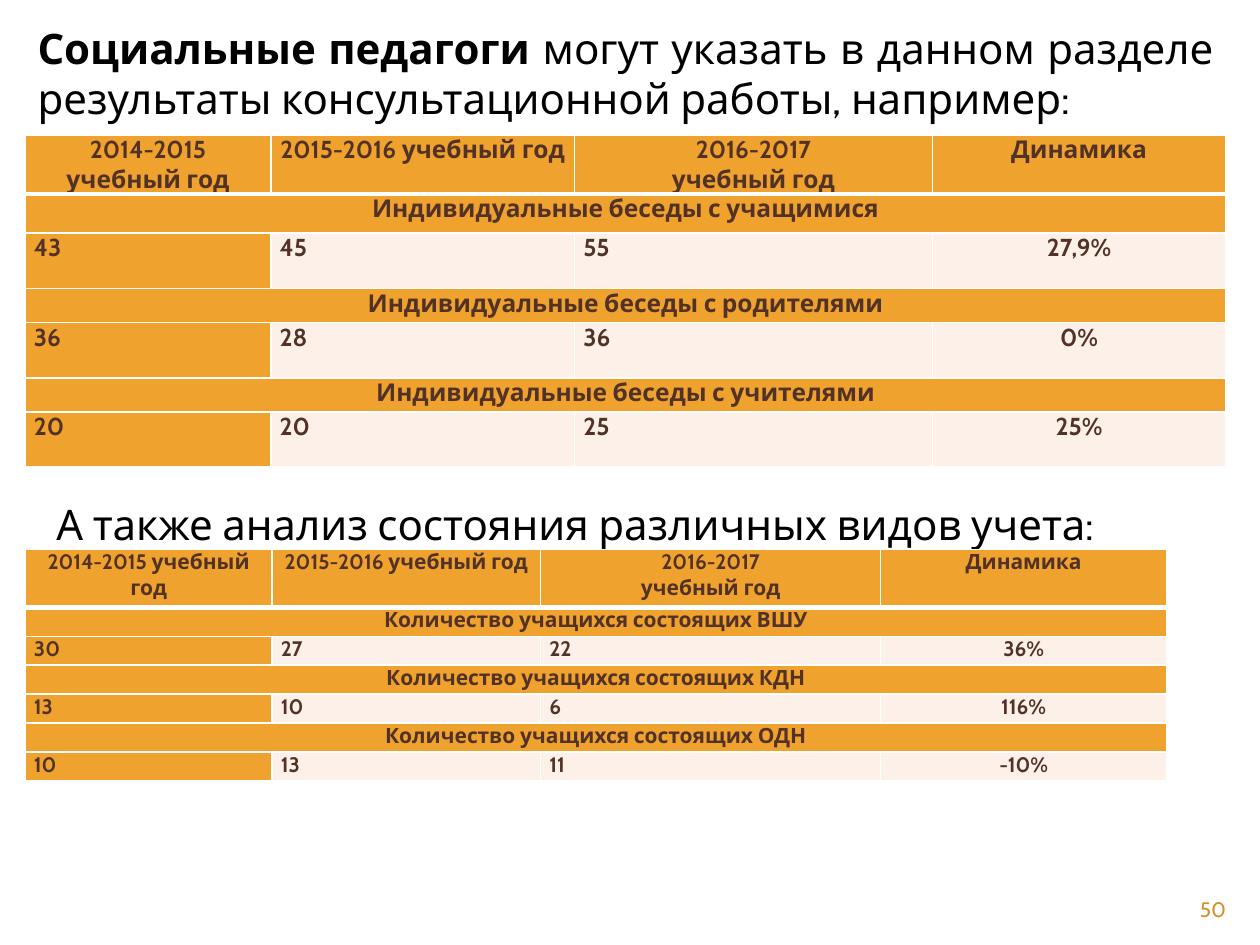
from lxml.etree import SubElement
from pptx import Presentation
from pptx.dml.color import RGBColor
from pptx.enum.text import MSO_ANCHOR, PP_ALIGN
from pptx.oxml.ns import qn
from pptx.util import Pt

PX = 9144
FONT = "Cabin"
WHITE = RGBColor(0xFF, 0xFF, 0xFF)
BLACK = RGBColor(0x00, 0x00, 0x00)
GOLD = RGBColor(0xF0, 0xA2, 0x2E)
CREAM = RGBColor(0xFC, 0xF0, 0xE8)
BROWN = RGBColor(0x52, 0x32, 0x27)
OCHRE = RGBColor(0xD4, 0x8F, 0x29)

YEARS = ["2014-2015 учебный год", "2015-2016 учебный год",
         "2016-2017\nучебный год", "Динамика"]
TALKS = [
    ("Индивидуальные беседы с учащимися", ["43", "45", "55", "27,9%"]),
    ("Индивидуальные беседы с родителями", ["36", "28", "36", "0%"]),
    ("Индивидуальные беседы с учителями", ["20", "20", "25", "25%"]),
]
COUNTS = [
    ("Количество учащихся состоящих ВШУ", ["30", "27", "22", "36%"]),
    ("Количество учащихся состоящих КДН", ["13", "10", "6", "116%"]),
    ("Количество учащихся состоящих ОДН", ["10", "13", "11", "-10%"]),
]


def scale(box):
    return [n * PX for n in box]


def style(para, size, color, align, bold=None):
    para.alignment = align
    font = para.font
    font.name, font.size, font.bold = FONT, Pt(size), bold
    font.color.rgb = color


def add_text(slide, box, parts, size, color, align, anchor=MSO_ANCHOR.TOP):
    frame = slide.shapes.add_textbox(*scale(box)).text_frame
    frame.word_wrap = True
    frame.vertical_anchor = anchor
    para = frame.paragraphs[0]
    style(para, size, color, align)
    for words, bold in parts:
        run = para.add_run()
        run.text = words
        if bold:
            run.font.bold = True


def add_edges(cell, top, base):
    props = cell._tc.get_or_add_tcPr()
    edges = (("lnL", 1), ("lnR", 1), ("lnT", top), ("lnB", base))
    for tag, width in edges:
        line = SubElement(props, qn(f"a:{tag}"), w=str(Pt(width)))
        fill = SubElement(line, qn("a:solidFill"))
        SubElement(fill, qn("a:srgbClr"), val=str(WHITE))


def fill_cell(cell, words, size, color, align, top=1, base=1):
    add_edges(cell, top, base)
    cell.fill.solid()
    cell.fill.fore_color.rgb = color
    cell.margin_left = cell.margin_right = 7 * PX
    cell.margin_top = cell.margin_bottom = 0
    cell.text = words
    for para in cell.text_frame.paragraphs:
        style(para, size, BROWN, align, True)


def add_grid(slide, box, cols, rows, groups, size):
    shape = slide.shapes.add_table(len(rows), len(cols), *scale(box))
    table = shape.table
    table.horz_banding = False
    for col, width in zip(table.columns, cols):
        col.width = width * PX
    for row, height in zip(table.rows, rows):
        row.height = height * PX
    for c, year in enumerate(YEARS):
        fill_cell(table.cell(0, c), year, size, GOLD, PP_ALIGN.CENTER, base=3)
    last = len(cols) - 1
    for g, (title, values) in enumerate(groups):
        r = 1 + 2 * g
        table.cell(r, 0).merge(table.cell(r, last))
        for c, value in enumerate(values):
            fill_cell(table.cell(r, c), "" if c else title, size, GOLD,
                      PP_ALIGN.CENTER, top=1 if g else 3)
            fill_cell(table.cell(r + 1, c), value, size, CREAM if c else GOLD,
                      PP_ALIGN.CENTER if c == last else PP_ALIGN.LEFT)


def main():
    deck = Presentation()
    deck.slide_width, deck.slide_height = scale((1000, 750))
    slide = deck.slides.add_slide(deck.slide_layouts[6])
    add_text(slide, (900, 708, 83, 27), [("50", False)], 12, OCHRE,
             PP_ALIGN.RIGHT, MSO_ANCHOR.MIDDLE)
    add_text(slide, (20, 13, 953, 131),
             [("Социальные педагоги ", True),
              ("могут указать в данном разделе результаты "
               "консультационной работы, например:", False)],
             24, BLACK, PP_ALIGN.JUSTIFY)
    add_grid(slide, (20, 107, 953, 264), [195, 241, 284, 233],
             [47, 31, 44, 27, 44, 27, 44], TALKS, 14)
    add_text(slide, (35, 391, 890, 91),
             [("А также анализ состояния различных видов учета:", False)],
             24, BLACK, PP_ALIGN.JUSTIFY)
    add_grid(slide, (20, 436, 906, 184), [196, 213, 270, 227],
             [46] + [23] * 6, COUNTS, 12)
    deck.save("out.pptx")


if __name__ == "__main__":
    main()
